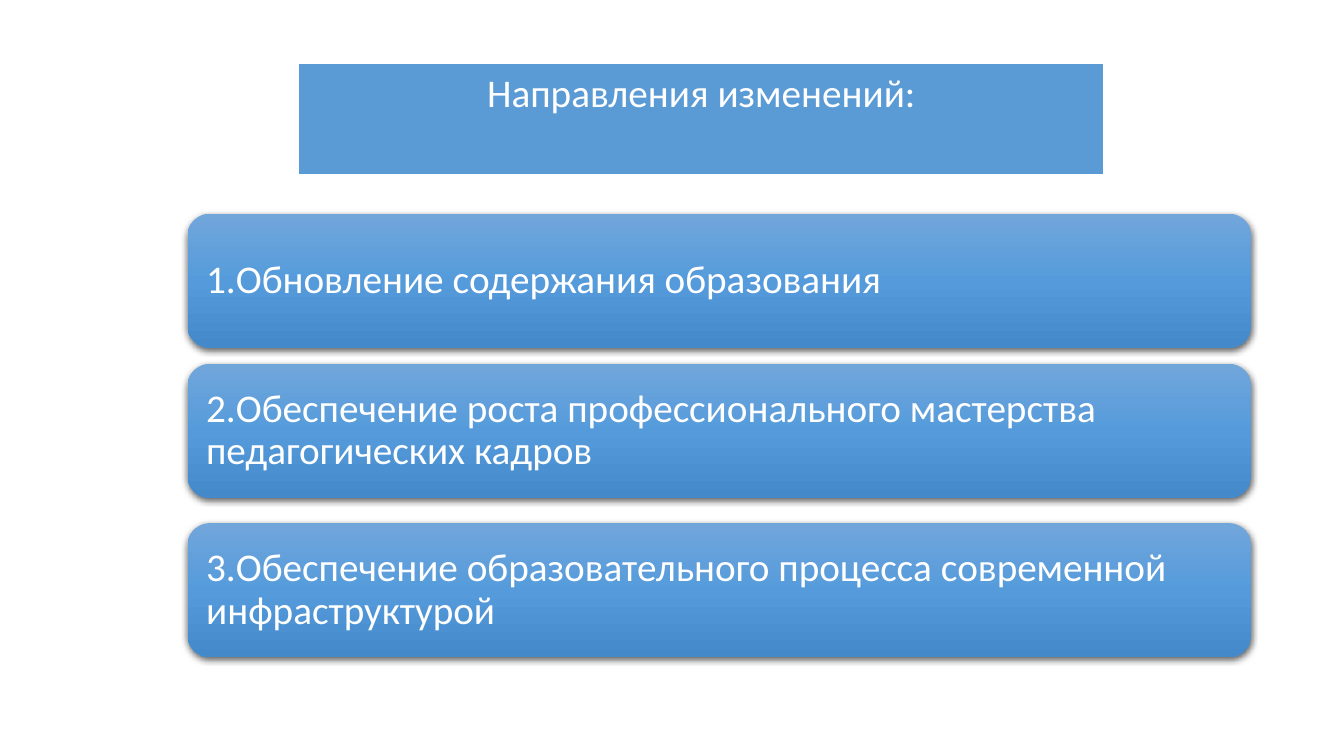
import pptx
import pptx.util
import pptx.oxml
import pptx.oxml.ns
import pptx.dml.color
import pptx.enum.shapes
import pptx.enum.text

Inches, Pt = pptx.util.Inches, pptx.util.Pt
Color = pptx.dml.color.RGBColor
Align = pptx.enum.text.PP_ALIGN
Anchor = pptx.enum.text.MSO_ANCHOR

HEAD = "Направления изменений:"
GOALS = [
    (2.12, "1.Обновление содержания образования"),
    (3.61, "2.Обеспечение роста профессионального мастерства педагогических кадров"),
    (5.19, "3.Обеспечение образовательного процесса современной инфраструктурой"),
]
STOPS = [(0, Color(0x71, 0xA6, 0xDB)), (50, Color(0x55, 0x9B, 0xDB)),
         (100, Color(0x44, 0x8A, 0xCA))]
BLUE = Color(0x5B, 0x9B, 0xD5)
WHITE = Color(0xFF, 0xFF, 0xFF)
BLACK = Color(0, 0, 0)
NS = pptx.oxml.ns.nsdecls("a")


def add_xml(node, text):
    node.append(pptx.oxml.parse_xml(text))


def write(shape, text, align, anchor, inset):
    frame = shape.text_frame
    frame.text = text
    frame.word_wrap = True
    frame.auto_size = pptx.enum.text.MSO_AUTO_SIZE.NONE
    frame.vertical_anchor = anchor
    frame.margin_left = frame.margin_right = Inches(inset[0])
    frame.margin_top = frame.margin_bottom = Inches(inset[1])
    para = frame.paragraphs[0]
    para.alignment = align
    para.font.size = Pt(28)
    para.font.name = "Calibri"
    para.font.color.rgb = WHITE
    return para


def add_head(slide):
    head = slide.shapes.title
    head.left, head.top = Inches(2.96), Inches(0.63)
    head.width, head.height = Inches(7.99), Inches(1.1)
    add_xml(head.element.spPr, f'<a:prstGeom {NS} prst="roundRect"><a:avLst/></a:prstGeom>')
    head.fill.solid()
    head.fill.fore_color.rgb = BLUE
    head.line.color.rgb = WHITE
    head.line.width = Pt(1)
    write(head, HEAD, Align.CENTER, Anchor.TOP, (0.1, 0.05))


def add_goal(slide, top, text):
    kind = pptx.enum.shapes.MSO_SHAPE.ROUNDED_RECTANGLE
    card = slide.shapes.add_shape(kind, Inches(1.86), Inches(top), Inches(10.55), Inches(1.33))
    props = card.element.spPr
    stops = "".join(f'<a:gs pos="{pos * 1000}"><a:srgbClr val="{color}"/></a:gs>'
                    for pos, color in STOPS)
    add_xml(props, f'<a:gradFill {NS} rotWithShape="1"><a:gsLst>{stops}</a:gsLst>'
                   '<a:lin ang="5400000" scaled="0"/></a:gradFill>')
    card.line.fill.background()
    add_xml(props, f'<a:effectLst {NS}><a:outerShdw blurRad="{Pt(4.5)}" dist="{Pt(1.5)}" '
                   f'dir="5400000" algn="ctr" rotWithShape="0"><a:srgbClr val="{BLACK}">'
                   '<a:alpha val="63000"/></a:srgbClr></a:outerShdw></a:effectLst>')
    para = write(card, text, Align.LEFT, Anchor.MIDDLE, (0.12, 0.12))
    para.line_spacing = 0.9


def main():
    """Build the slide of three directions of change."""
    deck = pptx.Presentation()
    deck.slide_width, deck.slide_height = Inches(13.33), Inches(7.5)
    slide = deck.slides.add_slide(deck.slide_layouts[5])
    add_head(slide)
    for top, text in GOALS:
        add_goal(slide, top, text)
    deck.save("out.pptx")


if __name__ == "__main__":
    main()
